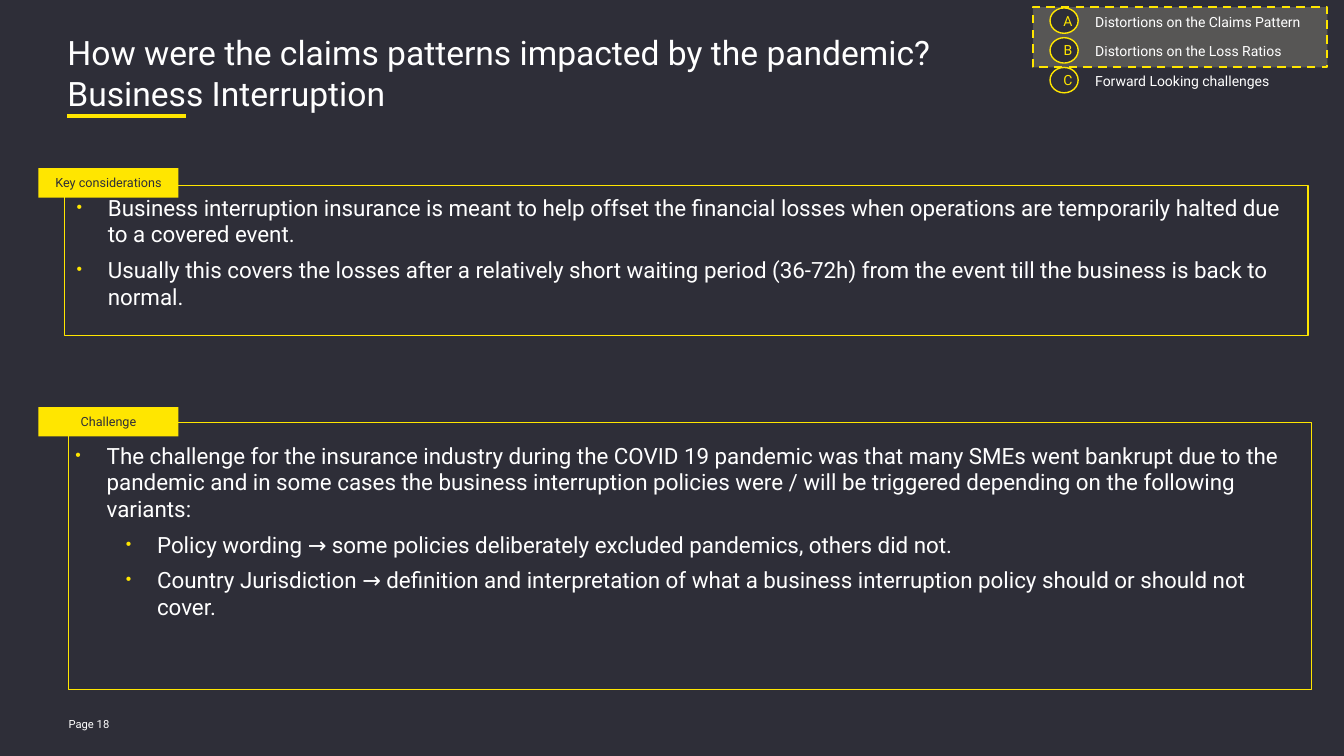
"""Build the slide on business interruption claims during the pandemic."""
from dataclasses import dataclass

from lxml import etree
from pptx import Presentation
from pptx.dml.color import RGBColor
from pptx.enum import dml, shapes, text
from pptx.oxml import ns
from pptx.util import Cm, Pt

TITLE = "How were the claims patterns impacted by the pandemic?\vBusiness Interruption"
PAGE = "Page 18"
PANELS = [
    {
        "tag": "Key considerations",
        "tag_top": 4.24,
        "frame": (1.63, 4.67, 31.34, 3.78),
        "body": (1.68, 4.75, 31.27, 3.2),
        "points": [
            (0, "Business interruption insurance is meant to help offset the financial losses "
                "when operations are temporarily halted due to a covered event."),
            (0, "Usually this covers the losses after a relatively short waiting period (36-72h) "
                "from the event till the business is back to normal."),
        ],
    },
    {
        "tag": "Challenge",
        "tag_top": 10.26,
        "frame": (1.73, 10.64, 31.34, 6.73),
        "body": (1.65, 11.0, 31.32, 4.78),
        "points": [
            (0, "The challenge for the insurance industry during the COVID 19 pandemic was that "
                "many SMEs went bankrupt due to the pandemic and in some cases the business "
                "interruption policies were / will be triggered depending on the following "
                "variants:"),
            (1, "Policy wording → some policies deliberately excluded pandemics, others did not."),
            (1, "Country Jurisdiction → definition and interpretation of what a business "
                "interruption policy should or should not cover."),
        ],
    },
]
AGENDA = [
    ("A", "Distortions on the Claims Pattern"),
    ("B", "Distortions on the Loss Ratios"),
    ("C", "Forward Looking challenges"),
]
AGENDA_STEP = 0.75
HANG, LEVEL_STEP = 0.79, 1.27


@dataclass(frozen=True)
class Theme:
    """Colours, font and type sizes of the slide."""
    font: str = "Roboto"
    dark: str = "2E2E38"
    accent: str = "FFE600"
    light: str = "FFFFFF"
    glow: str = "FFFACC"
    title: int = 24
    body: int = 16
    agenda: int = 10
    tag: int = 9
    page: int = 8


THEME = Theme()


def rgb(value):
    """Return the colour for a hex string."""
    return RGBColor.from_string(value)


def place(shape, box):
    """Move a shape to a box given in centimetres."""
    shape.left, shape.top, shape.width, shape.height = map(Cm, box)


def child(parent, tag, **attributes):
    """Append a drawing element with attributes."""
    return etree.SubElement(parent, ns.qn(tag), attributes)


def write(shape, lines, *, size, color=THEME.light, align=text.PP_ALIGN.LEFT,
          anchor=text.MSO_ANCHOR.TOP, inset=(0, 0, 0, 0), after=0, bullets=False):
    """Fill a shape with (level, line) pairs in one format."""
    frame = shape.text_frame
    frame.word_wrap = True
    frame.auto_size = text.MSO_AUTO_SIZE.NONE
    frame.vertical_anchor = anchor
    (frame.margin_left, frame.margin_top,
     frame.margin_right, frame.margin_bottom) = map(Cm, inset)
    for index, (level, line) in enumerate(lines):
        paragraph = frame.add_paragraph() if index else frame.paragraphs[0]
        paragraph.text = line
        paragraph.level = level
        paragraph.alignment = align
        paragraph.line_spacing = 1.0
        paragraph.space_before, paragraph.space_after = Pt(0), Pt(after)
        for run in paragraph.runs:
            run.font.name, run.font.size = THEME.font, Pt(size)
            run.font.color.rgb = rgb(color)
        if bullets:
            properties = paragraph._p.get_or_add_pPr()
            properties.set("marL", str(Cm(HANG + level * LEVEL_STEP)))
            properties.set("indent", str(-Cm(HANG)))
            child(child(properties, "a:buClr"), "a:srgbClr", val=THEME.accent)
            child(properties, "a:buSzPct", val="70000")
            child(properties, "a:buFont", typeface="Arial")
            child(properties, "a:buChar", char="•")


def add_box(slide, box, *, kind=shapes.MSO_SHAPE.RECTANGLE, fill=None, line=None):
    """Add a flat preset shape with an optional fill and line width."""
    shape = slide.shapes.add_shape(kind, *map(Cm, box))
    shape.shadow.inherit = False
    if fill:
        shape.fill.solid()
        shape.fill.fore_color.rgb = rgb(fill)
    else:
        shape.fill.background()
    if line:
        shape.line.color.rgb = rgb(THEME.accent)
        shape.line.width = Pt(line)
    else:
        shape.line.fill.background()
    return shape


def add_label(slide, box, label, **style):
    """Add a text box holding one line."""
    write(slide.shapes.add_textbox(*map(Cm, box)), [(0, label)], **style)


def add_heading(slide):
    """Set the title and its underline."""
    title = slide.shapes.title
    place(title, (1.7, 0.81, 30.5, 1.65))
    write(title, [(0, TITLE)], size=THEME.title)
    underline = slide.shapes.add_connector(
        shapes.MSO_CONNECTOR.STRAIGHT, Cm(1.7), Cm(2.92), Cm(4.7), Cm(2.92))
    underline.line.color.rgb = rgb(THEME.accent)
    underline.line.width = Pt(3)
    child(underline._element.spPr, "a:effectLst")


def add_panel(slide, body, panel):
    """Set one list with its frame and tag."""
    place(body, panel["body"])
    write(body, panel["points"], size=THEME.body, after=6, bullets=True,
          inset=(0.25, 0.13, 0.25, 0.13))
    add_box(slide, panel["frame"], line=1)
    tag = add_box(slide, (0.97, panel["tag_top"], 3.53, 0.74), fill=THEME.accent)
    write(tag, [(0, panel["tag"])], size=THEME.tag, color=THEME.dark,
          align=text.PP_ALIGN.CENTER, anchor=text.MSO_ANCHOR.MIDDLE)


def add_agenda(slide):
    """Add the lettered agenda with its highlighted part."""
    highlight = add_box(slide, (26.04, 0.18, 7.42, 1.52), fill=THEME.glow, line=1.5)
    highlight.line.dash_style = dml.MSO_LINE.DASH
    tint = highlight._element.spPr.find(ns.qn("a:solidFill")).find(ns.qn("a:srgbClr"))
    child(tint, "a:alpha", val="20000")
    for index, (letter, topic) in enumerate(AGENDA):
        shift = index * AGENDA_STEP
        badge = add_box(slide, (26.47, 0.2 + shift, 0.71, 0.64),
                        kind=shapes.MSO_SHAPE.OVAL, fill=THEME.dark, line=1)
        write(badge, [(0, letter)], size=THEME.agenda, color=THEME.accent,
              align=text.PP_ALIGN.CENTER, anchor=text.MSO_ANCHOR.MIDDLE, inset=(0.2, 0, 0, 0))
        add_label(slide, (27.61, 0.33 + shift, 5.6, 0.38), topic, size=THEME.agenda)


def main():
    """Build and save the deck."""
    deck = Presentation()
    deck.slide_width, deck.slide_height = Cm(33.88), Cm(19.05)
    slide = deck.slides.add_slide(deck.slide_layouts.get_by_name("Two Content"))
    slide.background.fill.solid()
    slide.background.fill.fore_color.rgb = rgb(THEME.dark)
    add_heading(slide)
    bodies = list(slide.placeholders)[1:]
    for body, panel in zip(bodies, PANELS):
        add_panel(slide, body, panel)
    add_agenda(slide)
    add_label(slide, (1.73, 17.98, 1.85, 0.51), PAGE, size=THEME.page,
              anchor=text.MSO_ANCHOR.MIDDLE)
    deck.save("out.pptx")


if __name__ == "__main__":
    main()
